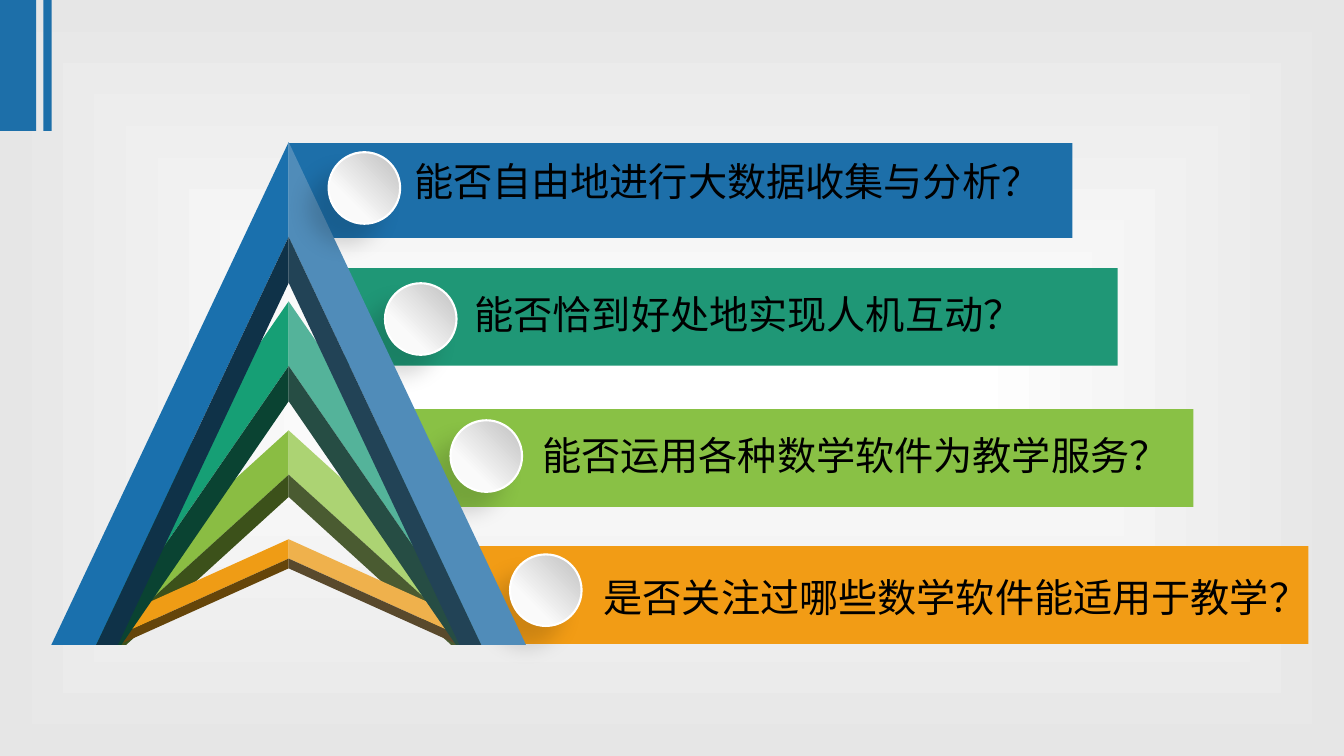
from collections import namedtuple

from lxml.etree import SubElement
from pptx import Presentation
from pptx.dml.color import RGBColor
from pptx.enum.shapes import MSO_SHAPE as Preset
from pptx.enum.text import MSO_ANCHOR as Anchor, MSO_AUTO_SIZE as AutoSize
from pptx.oxml.ns import qn
from pptx.util import Pt

Tier = namedtuple("Tier", "text bar bar_colour text_at disc_at levels reaches colours")

APEX_X = 206.2
BASE_Y = 460.6
DISC_SIZE = 51.1
BLUE = "1D6FA9"

TIERS = [
    Tier("能否运用各种数学软件为教学服务？", (272.9, 292.3, 579.6, 69.8), "89C145",
         (380.2, 304.6, 468), (321.8, 300.2), (307.4, 339.1, 355), (168.5, 134, 116),
         ("8ABD43", "3C511A", "ACD373", "4A5B31")),
    Tier("是否关注过哪些数学软件能适用于教学？", (340.6, 390.2, 594, 69.8), "F29C15",
         (424.1, 406.1, 523.4), (364.3, 396), (385.2, 399, 406), (167, 136.5, 121.5),
         ("EF9C15", "65450A", "EFB14C", "59492C")),
    Tier("能否恰到好处地实现人机互动？", (246.2, 191.5, 552.2, 69.8), "1F9776",
         (331.9, 203.8, 410.4), (275, 202.3), (215.3, 261.4, 286.6), (169, 137.5, 119.5),
         ("169F75", "0A4332", "54B39A", "264D44")),
    Tier("能否自由地进行大数据收集与分析？", (206.6, 102.2, 559.4, 67.7), BLUE,
         (288.7, 108.7, 466.6), (234.7, 108.7), (101.5, 169.2, 202), (169.5, 137.5, 122),
         ("1A70AD", "0F3248", "508CB9", "224356")),
]


def set_formats(target, formats):
    for name, value in formats.items():
        setattr(target, name, value)


def set_colour(fill, colour):
    fill.solid()
    fill.fore_color.rgb = RGBColor.from_string(colour)


def finish_shape(shape, colour):
    set_colour(shape.fill, colour)
    shape.line.fill.background()
    shape.shadow.inherit = False


def set_stops(gradient, stops):
    for child in list(gradient):
        gradient.remove(child)
    stop_list = SubElement(gradient, qn("a:gsLst"))
    for percent, colour in stops:
        stop = SubElement(stop_list, qn("a:gs"), pos=str(percent * 1000))
        SubElement(stop, qn("a:srgbClr"), val=colour)


def paint_background(page):
    page.background.fill.gradient()
    gradient = page.element.find(".//" + qn("a:gradFill"))
    set_stops(gradient, [(0, "FFFFFF"), (100, "E6E6E6")])
    centre = SubElement(gradient, qn("a:path"), path="shape")
    SubElement(centre, qn("a:fillToRect"), dict.fromkeys("ltrb", "50000"))


def add_bar(page, place, colour):
    bar = page.shapes.add_shape(Preset.RECTANGLE, *map(Pt, place))
    finish_shape(bar, colour)


def add_band(page, side, top, bottom, inner, outer, colour):
    points = [
        (APEX_X, top),
        (APEX_X, bottom),
        (APEX_X + side * inner, BASE_Y),
        (APEX_X + side * outer, BASE_Y),
    ]
    corners = [(Pt(x), Pt(y)) for x, y in points]
    builder = page.shapes.build_freeform(*corners[0])
    builder.add_line_segments(corners[1:])
    finish_shape(builder.convert_to_shape(), colour)


def add_chevron(page, tier):
    apex, fold, inside = tier.levels
    outer, middle, inner = tier.reaches
    for side, (face, edge) in ((-1, tier.colours[:2]), (1, tier.colours[2:])):
        add_band(page, side, apex, fold, middle, outer, face)
        add_band(page, side, fold, inside, inner, middle, edge)


def add_statement(page, text, left, top, width):
    box = page.shapes.add_textbox(Pt(left), Pt(top), Pt(width), Pt(41))
    frame = box.text_frame
    set_formats(frame, {
        "word_wrap": False,
        "auto_size": AutoSize.SHAPE_TO_FIT_TEXT,
        "vertical_anchor": Anchor.TOP,
    })
    span = frame.paragraphs[0].add_run()
    span.text = text
    set_formats(span.font, {"name": "Calibri", "size": Pt(28)})
    span.font.color.rgb = RGBColor.from_string("000000")


def add_disc(page, left, top):
    disc = page.shapes.add_shape(Preset.OVAL, *map(Pt, (left, top, DISC_SIZE, DISC_SIZE)))
    disc.fill.gradient()
    set_colour(disc.line.fill, "FFFFFF")
    disc.line.width = Pt(1.5)
    disc.shadow.inherit = False
    properties = disc.element.spPr
    gradient = properties.find(qn("a:gradFill"))
    set_stops(gradient, [(0, "FFFFFF"), (0, "BFBFBF"), (70, "FAFAFA")])
    SubElement(gradient, qn("a:lin"), ang=str(135 * 60000), scaled="0")
    shadow = SubElement(
        properties.find(qn("a:effectLst")), qn("a:outerShdw"),
        blurRad=str(Pt(15)), dist=str(Pt(20)), dir=str(135 * 60000),
    )
    shade = SubElement(shadow, qn("a:srgbClr"), val="000000")
    SubElement(shade, qn("a:alpha"), val="15000")


def add_tier(page, tier):
    add_bar(page, tier.bar, tier.bar_colour)
    add_chevron(page, tier)
    add_statement(page, tier.text, *tier.text_at)
    add_disc(page, *tier.disc_at)


def main():
    deck = Presentation()
    set_formats(deck, {"slide_width": Pt(960), "slide_height": Pt(540)})
    page = deck.slides.add_slide(deck.slide_layouts[6])
    paint_background(page)
    for left, width in ((0, 25.9), (31, 5.8)):
        add_bar(page, (left, 0, width, 93.6), BLUE)
    for tier in TIERS:
        add_tier(page, tier)
    deck.save("out.pptx")


if __name__ == "__main__":
    main()
